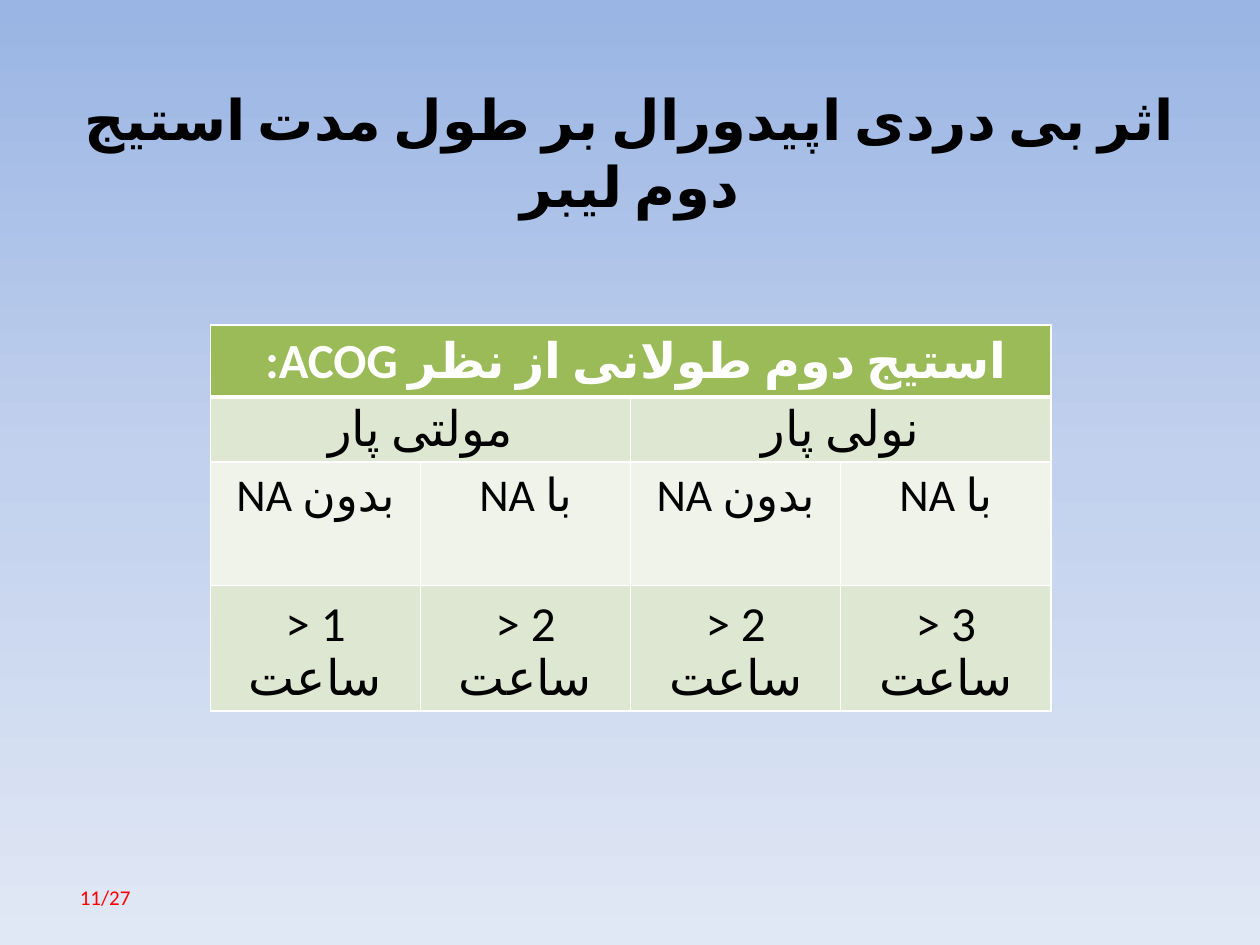
from copy import deepcopy
from dataclasses import dataclass

from lxml.etree import SubElement
from pptx import Presentation
from pptx.dml.color import RGBColor
from pptx.enum.text import MSO_ANCHOR, PP_ALIGN
from pptx.oxml.ns import qn
from pptx.util import Inches, Pt


@dataclass(frozen=True)
class Theme:
    font: str = "Calibri"
    language: str = "fa-IR"
    sky: tuple = ((0, "9AB5E4"), (0.5, "C2D1ED"), (1, "E1E8F5"))
    black: str = "000000"
    white: str = "FFFFFF"
    red: str = "FF0000"
    green: str = "9BBB59"
    band_dark: str = "DEE7D1"
    band_light: str = "EFF3EA"
    title_size: int = 32
    cell_size: int = 28
    label_size: int = 26
    number_size: int = 12


THEME = Theme()


@dataclass(frozen=True)
class RowStyle:
    height: float
    fill: str
    size: int = THEME.cell_size
    color: str = THEME.black
    bold: bool = False
    rtl: bool = False
    spacing: float = 1.0
    top: float = 0.05
    bottom_line: int = 1


# Each row: its style and its texts, which share the four columns equally.
ROWS = (
    (RowStyle(0.57, THEME.green, color=THEME.white, bold=True, rtl=True,
              bottom_line=3),
     ["استیج دوم طولانی از نظر ACOG: "]),
    (RowStyle(0.49, THEME.band_dark, spacing=0.9),
     ["مولتی پار", "نولی پار"]),
    (RowStyle(0.98, THEME.band_light, size=THEME.label_size, rtl=True),
     ["بدون NA", "با NA"] * 2),
    (RowStyle(0.97, THEME.band_dark, spacing=0.9, top=0.1),
     [f"> {hours} ساعت" for hours in (1, 2, 2, 3)]),
)


def write(frame, text, size, color=THEME.black, bold=False, rtl=False, spacing=None):
    """Put one centred paragraph into a text frame."""
    para = frame.paragraphs[0]
    para.alignment = PP_ALIGN.CENTER
    para.line_spacing = spacing
    if rtl:
        para._p.get_or_add_pPr().set("rtl", "1")
    span = para.add_run()
    span.text = text
    span.font.name = THEME.font
    span.font.size = Pt(size)
    span.font.bold = bold
    span.font.color.rgb = RGBColor.from_string(color)
    properties = span._r.get_or_add_rPr()
    properties.set("lang", THEME.language)
    SubElement(properties, qn("a:cs"), typeface=THEME.font)


def paint_background(page):
    fill = page.background.fill
    fill.gradient()
    fill.gradient_angle = 270
    stop_list = page._element.find(".//" + qn("a:gsLst"))
    stop_list.append(deepcopy(stop_list[-1]))
    for stop, (position, color) in zip(fill.gradient_stops, THEME.sky):
        stop.position = position
        stop.color.rgb = RGBColor.from_string(color)


def place_title(page, box, text):
    title = page.shapes.title
    title.left, title.top, title.width, title.height = map(Inches, box)
    title.text_frame.vertical_anchor = MSO_ANCHOR.MIDDLE
    write(title.text_frame, text, THEME.title_size, bold=True)


def outline_cell(cell, top_line, bottom_line):
    properties = cell._tc.get_or_add_tcPr()
    widths = {"lnL": 1, "lnR": 1, "lnT": top_line, "lnB": bottom_line}
    for index, (side, width) in enumerate(widths.items()):
        line = SubElement(properties, qn(f"a:{side}"), w=str(Pt(width)))
        fill = SubElement(line, qn("a:solidFill"))
        SubElement(fill, qn("a:srgbClr"), val=THEME.white)
        properties.insert(index, line)


def place_table(page, box, rows, column_count=4):
    table = page.shapes.add_table(len(rows), column_count, *map(Inches, box)).table
    top_line = 1
    for row_index, (style, texts) in enumerate(rows):
        table.rows[row_index].height = Inches(style.height)
        span_width = column_count // len(texts)
        for column in range(column_count):
            cell = table.cell(row_index, column)
            cell.fill.solid()
            cell.fill.fore_color.rgb = RGBColor.from_string(style.fill)
            cell.margin_top = Inches(style.top)
            cell.margin_bottom = Inches(0.04)
            outline_cell(cell, top_line, style.bottom_line)
        for index, text in enumerate(texts):
            first = index * span_width
            cell = table.cell(row_index, first)
            if span_width > 1:
                cell.merge(table.cell(row_index, first + span_width - 1))
            write(cell.text_frame, text, style.size, style.color,
                  style.bold, style.rtl, style.spacing)
        top_line = style.bottom_line


def place_page_number(page, box, text):
    frame = page.shapes.add_textbox(*map(Inches, box)).text_frame
    frame.word_wrap = True
    frame.vertical_anchor = MSO_ANCHOR.MIDDLE
    write(frame, text, THEME.number_size, THEME.red)


def main():
    deck = Presentation()
    deck.slide_width, deck.slide_height = Inches(10), Inches(7.5)
    page = deck.slides.add_slide(deck.slide_layouts.get_by_name("Title Only"))
    paint_background(page)
    place_title(page, (0.5, 0.58, 9, 1.25),
                "اثر بی دردی اپیدورال بر طول مدت استیج دوم لیبر")
    table_height = sum(style.height for style, _ in ROWS)
    place_table(page, (1.67, 2.58, 6.67, table_height), ROWS)
    place_page_number(page, (0.5, 6.92, 0.67, 0.4), "11/27")
    deck.save("out.pptx")


if __name__ == "__main__":
    main()
